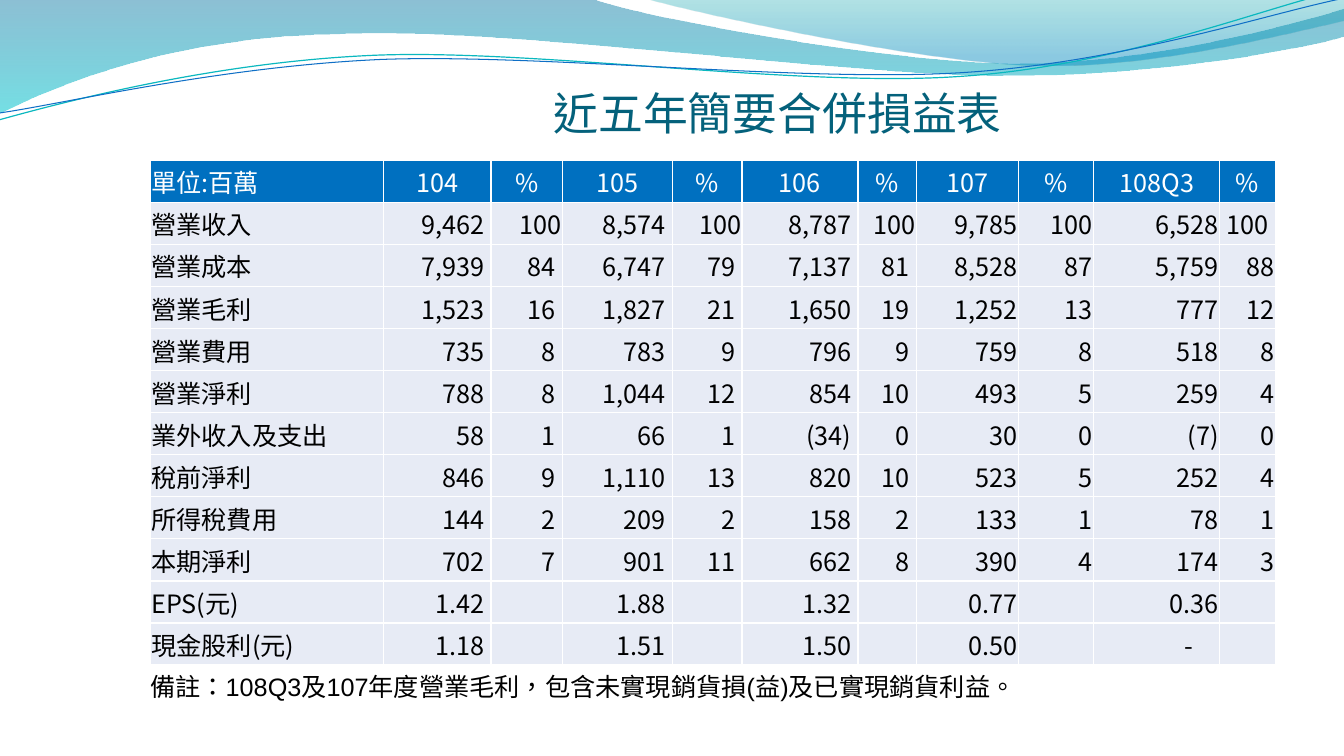
import math
import pptx
import pptx.dml.color
import pptx.enum.text
import pptx.oxml
import pptx.oxml.ns
import pptx.util

PX = 9144
CJK = "Noto Sans CJK SC"
NAMESPACE = pptx.oxml.ns.nsdecls("a")
ALIGN = pptx.enum.text.PP_ALIGN
ANCHOR = pptx.enum.text.MSO_ANCHOR


def color(hex_string):
    return pptx.dml.color.RGBColor.from_string(hex_string)


def style_text(paragraph, size, font_name, hex_string, alignment):
    paragraph.alignment = alignment
    for run in paragraph.runs:
        run.font.size = pptx.util.Pt(size)
        run.font.name = font_name
        run.font.bold = False
        run.font.color.rgb = color(hex_string)
        run.font._element.set("lang", "zh-TW")
        east_asian = pptx.oxml.parse_xml(f'<a:ea {NAMESPACE} typeface="{CJK}"/>')
        run.font._element.find(pptx.oxml.ns.qn("a:latin")).addnext(east_asian)


presentation = pptx.Presentation()
presentation.slide_width = 1333 * PX
presentation.slide_height = 750 * PX
slide = presentation.slides.add_slide(presentation.slide_layouts[5])

left_wave = [(0, 0), (587, -1), (634, 17, 885, 63, 1011, 63),
             (1138, 63, 1278, 26, 1333, 9), (1335, 36),
             (1311, 44, 1160, 76, 994, 75), (829, 75, 509, 28, 343, 34),
             (172, 36, 61, 83, -1, 113), (0, 0)]
right_wave = [(639, -1), (679, 11, 909, 62, 1025, 65),
              (1141, 69, 1282, 32, 1333, 21), (1333, 0), (639, -1)]
teal_curve = [(-1, 119), (64, 101, 211, 62, 369, 55),
              (527, 48, 790, 87, 950, 76), (1110, 66, 1252, 8, 1331, -10)]
blue_curve = [(0, 112), (63, 103, 218, 66, 378, 59),
              (537, 53, 796, 82, 955, 72), (1115, 62, 1255, 14, 1334, -2)]
waves = [
    (left_wave, 0, [(0, "0074A1", 45), (100, "00C6CF", 55)], None, None),
    (right_wave, 0, [(0, "00A1A9", 30), (80, "008BBF", 45)], None, None),
    (teal_curve, -2.7, None, "0AB8BF", 0.85),
    (blue_curve, -2.7, None, "0F6FC6", 0.75),
]
for segments, rotation, stops, line_color, line_width in waves:
    sine, cosine = math.sin(math.radians(-rotation)), math.cos(math.radians(-rotation))
    points = []
    for segment in segments:
        for x, y in zip(segment[::2], segment[1::2]):
            dx, dy = x - 666, y - 58
            points.append((round((666 + dx * cosine - dy * sine) * PX),
                           round((58 + dx * sine + dy * cosine) * PX)))
    builder = slide.shapes.build_freeform(*points[0])
    builder.add_line_segments(points[1:], close=stops is not None)
    wave = builder.convert_to_shape()
    wave.rotation = rotation
    wave.shadow.inherit = False
    vertices = iter(list(wave._element.iter(pptx.oxml.ns.qn("a:lnTo"))))
    for segment in segments[1:]:
        vertex = next(vertices)
        if len(segment) == 6:
            curve = pptx.oxml.parse_xml(f'<a:cubicBezTo {NAMESPACE}/>')
            vertex.addprevious(curve)
            for corner in (vertex, next(vertices), next(vertices)):
                curve.append(corner[0])
                corner.getparent().remove(corner)
    if stops:
        wave.line.fill.background()
        stop_xml = "".join(
            f'<a:gs pos="{position * 1000}"><a:srgbClr val="{stop_color}">'
            f'<a:alpha val="{alpha * 1000}"/></a:srgbClr></a:gs>'
            for position, stop_color, alpha in stops)
        gradient = pptx.oxml.parse_xml(
            f'<a:gradFill {NAMESPACE} rotWithShape="1"><a:gsLst>{stop_xml}</a:gsLst>'
            '<a:lin ang="5400000" scaled="0"/></a:gradFill>')
        wave._element.spPr.find(pptx.oxml.ns.qn("a:custGeom")).addnext(gradient)
    else:
        wave.fill.background()
        wave.line.color.rgb = color(line_color)
        wave.line.width = pptx.util.Pt(line_width)

title = slide.shapes.title
title._element.getparent().append(title._element)
title.left, title.top, title.width, title.height = 284 * PX, 68 * PX, 975 * PX, 70 * PX
title_frame = title.text_frame
title_frame.text = "近五年簡要合併損益表"
title_frame.vertical_anchor = ANCHOR.BOTTOM
title_frame.margin_left = title_frame.margin_right = title_frame.margin_bottom = 0
title_frame.margin_top = 5 * PX
style_text(title_frame.paragraphs[0], 32, CJK, "04617B", ALIGN.CENTER)

income_rows = [
    "單位:百萬|104|%|105|%|106|%|107|%|108Q3|%",
    "營業收入|9,462 |100|8,574 |100|8,787 |100|9,785|100|6,528|100 ",
    "營業成本|7,939 |84 |6,747 |79 |7,137 |81 |8,528|87|5,759|88",
    "營業毛利|1,523 |16 |1,827 |21 |1,650 |19 |1,252|13|777|12",
    "營業費用|735 |8 |783 |9 |796 |9 |759|8|518|8",
    "營業淨利|788 |8 |1,044 |12 |854 |10 |493|5|259|4",
    "業外收入及支出|58 |1 |66 |1 |(34) |0 |30|0|(7)|0",
    "稅前淨利|846 |9 |1,110 |13 |820 |10 |523|5|252|4",
    "所得稅費用|144 |2 |209 |2 |158 |2 |133|1|78|1",
    "本期淨利|702 |7 |901 |11 |662 |8 |390|4|174|3",
    "EPS(元)|1.42 ||1.88 ||1.32 ||0.77||0.36|",
    "現金股利(元)|1.18 ||1.51 ||1.50 ||0.50||-　|",
]
column_widths = [231, 107, 71, 109, 69, 115, 58, 101, 75, 125, 55]
table = slide.shapes.add_table(
    len(income_rows), len(column_widths),
    149 * PX, 159 * PX, sum(column_widths) * PX, 501 * PX).table
table.horz_banding = False
for column, width in zip(table.columns, column_widths):
    column.width = width * PX
for row_index, row_text in enumerate(income_rows):
    table.rows[row_index].height = 501 * PX // len(income_rows)
    is_header = row_index == 0
    for column_index, value in enumerate(row_text.split("|")):
        cell = table.cell(row_index, column_index)
        cell.text_frame.text = value
        cell.vertical_anchor = ANCHOR.MIDDLE
        cell.margin_left = cell.margin_right = cell.margin_top = PX
        cell.margin_bottom = 0
        cell.fill.solid()
        cell.fill.fore_color.rgb = color("0070C0" if is_header else "E7EBF5")
        if column_index == 0:
            alignment = ALIGN.LEFT
        else:
            alignment = ALIGN.CENTER if is_header else ALIGN.RIGHT
        style_text(cell.text_frame.paragraphs[0], 18, CJK,
                   "FFFFFF" if is_header else "000000", alignment)
        cell_properties = cell._tc.get_or_add_tcPr()
        for position, side in enumerate("LRTB"):
            cell_properties.insert(position, pptx.oxml.parse_xml(
                f'<a:ln{side} {NAMESPACE} w="12700"><a:solidFill>'
                f'<a:srgbClr val="FFFFFF"/></a:solidFill></a:ln{side}>'))

note = slide.shapes.add_textbox(139 * PX, 661 * PX, 1135 * PX, 40 * PX)
note.text_frame.word_wrap = True
note.text_frame.auto_size = pptx.enum.text.MSO_AUTO_SIZE.SHAPE_TO_FIT_TEXT
note.text_frame.text = "備註：108Q3及107年度營業毛利，包含未實現銷貨損(益)及已實現銷貨利益。"
style_text(note.text_frame.paragraphs[0], 18, "Arial", "000000", ALIGN.LEFT)

presentation.save("out.pptx")
